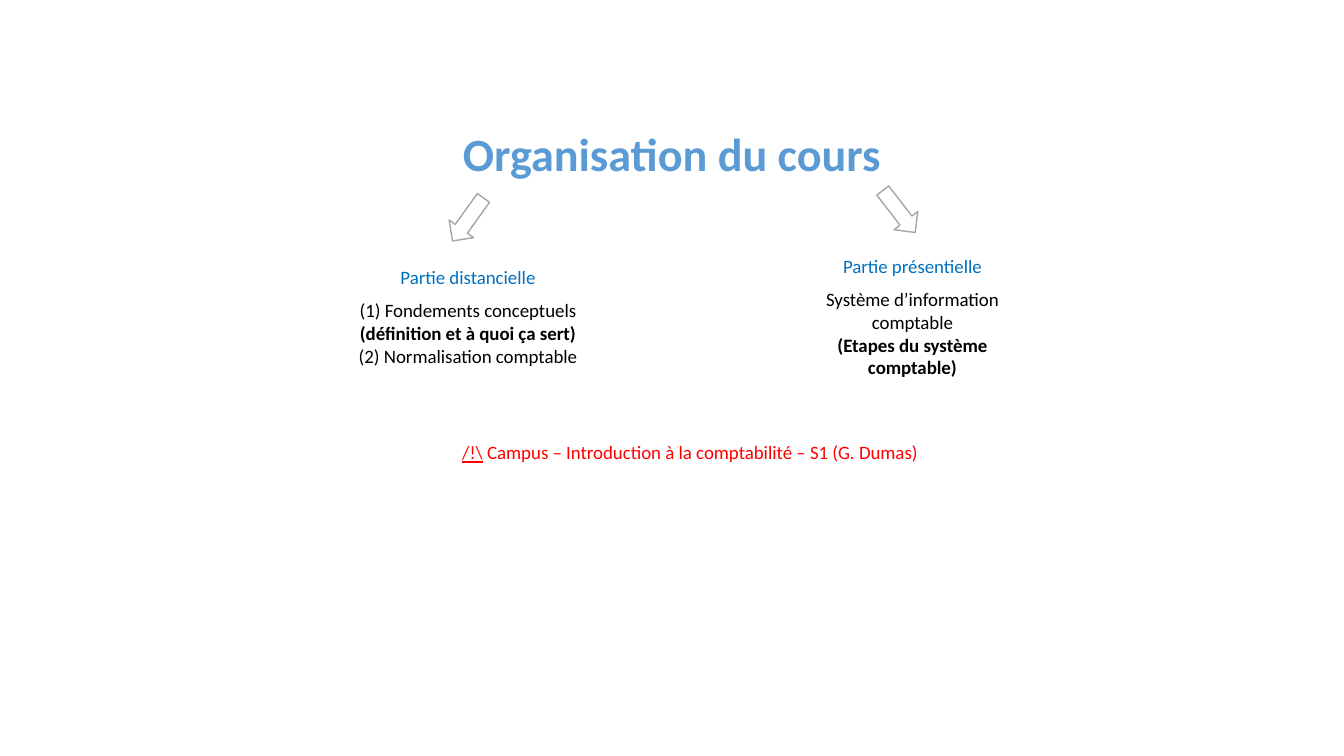
from dataclasses import dataclass

from pptx import Presentation
from pptx import util as u
from pptx.dml import color
from pptx.enum import shapes, text

PX = 914400 / 100.8


def px(n):
    """Turn whole pixels into EMU."""
    return u.Emu(round(n * PX))


@dataclass(frozen=True)
class Theme:
    """Colours, font and type sizes of the slide."""
    font: str = "Calibri"
    title: str = "5B9BD5"
    heading: str = "0070C0"
    body: str = "000000"
    alert: str = "FF0000"
    outline: str = "A5A5A5"
    paper: str = "FFFFFF"
    title_size: float = 33
    body_size: float = 13.5
    heading_gap: float = 7.3


class Deck:
    """Hold the theme and the current slide."""

    def __init__(self, prs, theme):
        """Add a blank slide to draw on."""
        self.theme = theme
        self.s = prs.slides.add_slide(prs.slide_layouts[6])

    def text(self, box, paragraphs, **frame):
        """Add a centred text box from lists of (text, format) runs."""
        tf = self.s.shapes.add_textbox(*map(px, box)).text_frame
        for name, value in {"word_wrap": True, **frame}.items():
            setattr(tf, name, value)
        for i, runs in enumerate(paragraphs):
            p = tf.add_paragraph() if i else tf.paragraphs[0]
            p.alignment = text.PP_ALIGN.CENTER
            for words, fmt in runs:
                self.run(p, words, **fmt)
        return tf

    def run(self, p, words, rgb, **fmt):
        """Add one run in the theme font."""
        r = p.add_run()
        r.text = words
        r.font.color.rgb = color.RGBColor.from_string(rgb)
        base = {"name": self.theme.font, "size": u.Pt(self.theme.body_size)}
        for name, value in {**base, **fmt}.items():
            setattr(r.font, name, value)

    def title(self, box, words):
        """Add the slide title."""
        fmt = {"rgb": self.theme.title, "size": u.Pt(self.theme.title_size), "bold": True}
        self.text(box, [[(words, fmt)]], vertical_anchor=text.MSO_ANCHOR.MIDDLE,
                  margin_left=px(7), margin_right=px(7), margin_top=px(4), margin_bottom=px(4))

    def section(self, box, heading, lines):
        """Add a course section: a heading over (text, bold) lines."""
        t = self.theme
        body = [[(words, {"rgb": t.body, "bold": bold})] for words, bold in lines]
        tf = self.text(box, [[(heading, {"rgb": t.heading})], *body])
        tf.paragraphs[0].space_after = u.Pt(t.heading_gap)

    def notice(self, box, mark, words):
        """Add a warning with an underlined mark."""
        rgb = self.theme.alert
        self.text(box, [[(mark, {"rgb": rgb, "underline": True}), (" " + words, {"rgb": rgb})]])

    def arrow(self, box, angle):
        """Add an outlined block arrow turned by an angle."""
        sp = self.s.shapes.add_shape(shapes.MSO_SHAPE.DOWN_ARROW, *map(px, box))
        sp.rotation = angle
        sp.shadow.inherit = False
        sp.fill.solid()
        sp.fill.fore_color.rgb = color.RGBColor.from_string(self.theme.paper)
        sp.line.color.rgb = color.RGBColor.from_string(self.theme.outline)
        sp.line.width = u.Pt(1)


def main():
    """Build and save the slide."""
    prs = Presentation()
    prs.slide_width, prs.slide_height = px(1344), px(756)
    deck = Deck(prs, Theme())
    deck.title((332, 106, 680, 95), "Organisation du cours")
    deck.arrow((453, 193, 30, 53), 35.7)
    deck.arrow((884, 185, 30, 53), 322.4)
    deck.section((346, 261, 244, 112), "Partie distancielle", [
        ("(1) Fondements conceptuels", False),
        ("(définition et à quoi ça sert)", True),
        ("(2) Normalisation comptable", False),
    ])
    deck.section((783, 250, 259, 112), "Partie présentielle", [
        ("Système d’information comptable", False),
        ("(Etapes du système comptable)", True),
    ])
    deck.notice((326, 436, 728, 33), "/!\\",
                "Campus – Introduction à la comptabilité – S1 (G. Dumas)")
    prs.save("out.pptx")


if __name__ == "__main__":
    main()
